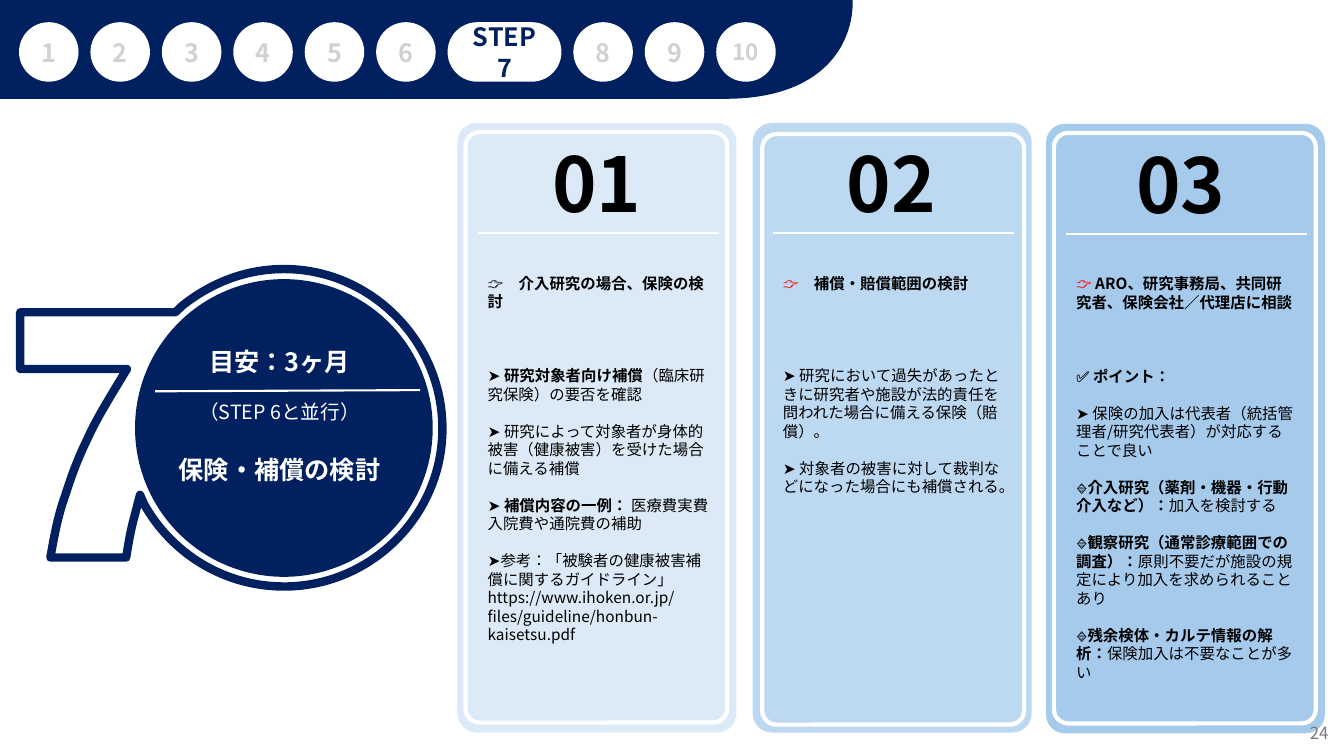
from dataclasses import dataclass

from lxml.etree import SubElement
from pptx import Presentation
from pptx.dml.color import RGBColor
from pptx.enum.lang import MSO_LANGUAGE_ID as Lang
from pptx.enum.shapes import MSO_CONNECTOR, MSO_SHAPE as Shape
from pptx.enum.text import MSO_ANCHOR as Anchor, PP_ALIGN as Align
from pptx.oxml.ns import qn
from pptx.util import Cm, Pt


@dataclass(frozen=True)
class Theme:
    font: str = "Noto Sans CJK JP"
    navy: str = "002060"
    white: str = "FFFFFF"
    black: str = "000000"
    red: str = "FF0000"
    idle: str = "D1D1D1"
    grey: str = "797979"
    number: int = 54
    title: int = 18
    tight: int = 16
    note: int = 14
    page: int = 12
    body: int = 11
    leading: float = 1.2


T = Theme()
LINE = T.body * T.leading


@dataclass(frozen=True)
class Para:
    """One paragraph; ** toggles bold and gap is the space before in points."""
    text: str
    size: int = T.body
    color: str = T.black
    gap: float = 0
    lead: str = ""
    lead_color: str = T.black


@dataclass(frozen=True)
class Card:
    number: str
    fill: str
    left: float
    top: float
    inset: tuple[float, float]
    number_center: float
    pointer: str
    pointer_color: str
    heading: str
    heading_gap: int
    points: tuple[str, ...]
    source: str = ""


CARDS = (
    Card("01", "DCEAF7", 11.53, 3.1, (0.2, 0.23), 3.51, "👉　", T.black,
         "介入研究の場合、保険の検討", 3,
         ("➤ **研究対象者向け補償**（臨床研究保険）の要否を確認",
          "➤ 研究によって対象者が身体的被害（健康被害）を受けた場合に備える補償",
          "➤ **補償内容の一例： **医療費実費 入院費や通院費の補助",
          "➤参考：「被験者の健康被害補償に関するガイドライン」"),
         "https://www.ihoken.or.jp/files/guideline/honbun-kaisetsu.pdf"),
    Card("02", "BDD8F1", 18.97, 3.1, (0.24, 0.28), 3.5, "👉　", T.red,
         "補償・賠償範囲の検討", 4,
         ("➤ 研究において過失があったときに研究者や施設が法的責任を問われた場合に備える保険（賠償）。",
          "➤ 対象者の被害に対して裁判などになった場合にも補償される。")),
    Card("03", "A6CAEC", 26.36, 3.12, (0.2, 0.23), 3.4, "👉 ", T.red,
         "ARO、研究事務局、共同研究者、保険会社／代理店に相談", 3,
         ("**✅ ポイント：**",
          "➤ 保険の加入は代表者（統括管理者/研究代表者）が対応することで良い",
          "🔹**介入研究（薬剤・機器・行動介入など）：**加入を検討する",
          "🔹**観察研究（通常診療範囲での調査）：**原則不要だが施設の規定により加入を求められることあり",
          "🔹**残余検体・カルテ情報の解析：**保険加入は不要なことが多い")),
)

# Each step is a line end (one point) or a cubic curve (three points), in cm.
SEVEN = (
    ((7.16, 6.78),),
    ((9.34, 6.78), (11.15, 8.59), (11.15, 10.8)),
    ((11.15, 13), (9.34, 14.78), (7.16, 14.78)),
    ((5.64, 14.78), (4.32, 13.94), (3.63, 12.7)),
    ((3.53, 12.47),), ((3.35, 13.16),),
    ((3.28, 13.44), (3.23, 13.74), (3.18, 14.05)),
    ((1.27, 14.05),),
    ((1.37, 13.49), (1.47, 12.95), (1.65, 12.47)),
    ((1.8, 11.99), (1.98, 11.51), (2.21, 11.05)),
    ((2.41, 10.59), (2.77, 10.01), (3.2, 9.3)),
    ((0.51, 9.3),), ((0.51, 7.87),), ((4.42, 7.87),), ((4.6, 7.7),),
    ((5.31, 7.14), (6.17, 6.78), (7.16, 6.78)),
)
BANNER = (((0, 0),), ((18.36, 0),), ((21.49, 0),),
          ((21.51, 1.09), (20.78, 2.46), (18.36, 2.49)), ((0, 2.49),), ((0, 0),))


def rgb(color: str) -> RGBColor:
    return RGBColor.from_string(color)


def paint(sp, fill: str, line: str = "", width: float = 0) -> None:
    sp.shadow.inherit = False
    sp.fill.solid()
    sp.fill.fore_color.rgb = rgb(fill)
    if line:
        sp.line.color.rgb = rgb(line)
        sp.line.width = Pt(width)
    else:
        sp.line.fill.background()


def add_box(slide, kind, left, top, width, height, fill, line="", weight=0.0, adj=None):
    sp = slide.shapes.add_shape(kind, Cm(left), Cm(top), Cm(width), Cm(height))
    if adj is not None:
        sp.adjustments[0] = adj
    paint(sp, fill, line, weight)
    return sp


def add_outline(slide, steps, fill: str, line: str = "", width: float = 0) -> None:
    """Draw a closed outline through the step ends, then bend the curved steps."""
    ends = [(Cm(x), Cm(y)) for x, y in (step[-1] for step in steps)]
    builder = slide.shapes.build_freeform(*ends[0])
    builder.add_line_segments(ends[1:], close=True)
    sp = builder.convert_to_shape()
    for segment, step in zip(list(sp._element.iter(qn("a:lnTo"))), steps[1:]):
        if len(step) == 3:
            segment.tag = qn("a:cubicBezTo")
            segment.clear()
            for x, y in step:
                SubElement(segment, qn("a:pt"), x=str(Cm(x) - sp.left), y=str(Cm(y) - sp.top))
    paint(sp, fill, line, width)


def add_rule(slide, x1: float, y1: float, x2: float, y2: float) -> None:
    ln = slide.shapes.add_connector(MSO_CONNECTOR.STRAIGHT, Cm(x1), Cm(y1), Cm(x2), Cm(y2))
    ln.line.color.rgb = rgb(T.white)
    ln.line.width = Pt(1.5)
    SubElement(ln._element.spPr, qn("a:effectLst"))


def write(tf, paras: list[Para], align=Align.CENTER, anchor=Anchor.TOP) -> None:
    tf.word_wrap = True
    tf.vertical_anchor = anchor
    for i, para in enumerate(paras):
        p = tf.paragraphs[0] if i == 0 else tf.add_paragraph()
        p.alignment = align
        p.line_spacing = Pt(para.size * T.leading)
        if para.gap:
            p.space_before = Pt(para.gap)
        p.font.name, p.font.size = T.font, Pt(para.size)
        p.font.language_id = Lang.JAPANESE
        p.font.color.rgb = rgb(para.color)
        SubElement(p._p.pPr.find(qn("a:defRPr")), qn("a:ea"), typeface=T.font)
        if para.lead:
            r = p.add_run()
            r.text = para.lead
            r.font.color.rgb = rgb(para.lead_color)
        spans = [(s, j % 2 == 1) for j, s in enumerate(para.text.split("**")) if s]
        p.font.bold = all(bold for _, bold in spans) and not para.lead
        for text, bold in spans:
            r = p.add_run()
            r.text = text
            if bold != p.font.bold:
                r.font.bold = bold
        for r in p.runs:
            r.font.language_id = Lang.JAPANESE


def add_text(slide, left, top, width, height, paras, align=Align.CENTER, anchor=Anchor.TOP):
    tf = slide.shapes.add_textbox(Cm(left), Cm(top), Cm(width), Cm(height)).text_frame
    write(tf, paras, align, anchor)
    return tf


def add_card(slide, card: Card) -> None:
    x, y = card.left, card.top
    dx, dy = card.inset
    add_box(slide, Shape.ROUNDED_RECTANGLE, x, y, 7.03, 15.36, card.fill, adj=0.068)
    add_box(slide, Shape.ROUNDED_RECTANGLE, x + dx, y + dy, 6.6, 14.88, card.fill,
            T.white, 3, 0.054)
    add_text(slide, x + card.number_center - 1.75, y + 0.23, 3.5, 2.57,
             [Para(f"**{card.number}**", T.number)])
    paras = [Para(f"**{card.heading}**", lead=card.pointer, lead_color=card.pointer_color)]
    paras += [Para(text, gap=LINE * (1 if i else card.heading_gap))
              for i, text in enumerate(card.points)]
    if card.source:
        paras.append(Para(card.source))
    tf = add_text(slide, x + 0.51, y + 3.2, 6.07, 11.5, paras, Align.LEFT)
    tf.margin_top = Cm(0.6)
    add_rule(slide, x + 0.51, y + 2.78, x + 6.58, y + 2.78)


def add_badge(slide) -> None:
    add_outline(slide, SEVEN, T.white, T.navy, 6)
    add_box(slide, Shape.FLOWCHART_CONNECTOR, 3.51, 7.14, 7.29, 7.29, T.navy, T.navy, 6)
    add_text(slide, 4.11, 8.61, 5.87, 3.76, [
        Para("**目安：3ヶ月**", T.title, T.white),
        Para("（STEP 6と並行）", T.note, T.white, T.note * T.leading),
        Para("**保険・補償の検討**", T.title, T.white, T.title * T.leading)])
    add_rule(slide, 3.91, 9.86, 10.59, 9.83)


def add_steps(slide, current: int) -> None:
    add_outline(slide, BANNER, T.navy)
    left = 0.48
    for step in range(1, 11):
        active = step == current
        width = 2.87 if active else 1.5
        kind = Shape.ROUNDED_RECTANGLE if active else Shape.FLOWCHART_CONNECTOR
        sp = add_box(slide, kind, left, 0.56, width, 1.5, T.white, adj=0.5 if active else None)
        tf = sp.text_frame
        if step == 10:
            tf.margin_left = tf.margin_right = tf.margin_top = tf.margin_bottom = Cm(0.1)
        label = f"STEP {step}" if active else str(step)
        write(tf, [Para(f"**{label}**", T.tight if step == 10 else T.title,
                        T.navy if active else T.idle)], anchor=Anchor.MIDDLE)
        left += width + 0.3


def main() -> None:
    prs = Presentation()
    prs.slide_width, prs.slide_height = Cm(33.87), Cm(19.05)
    slide = prs.slides.add_slide(prs.slide_layouts[6])
    add_badge(slide)
    for card in CARDS:
        add_card(slide, card)
    add_steps(slide, current=7)
    add_text(slide, 26.11, 17.96, 7.62, 1.02, [Para("24", T.page, T.grey)],
             Align.RIGHT, Anchor.MIDDLE)
    prs.save("out.pptx")


if __name__ == "__main__":
    main()
